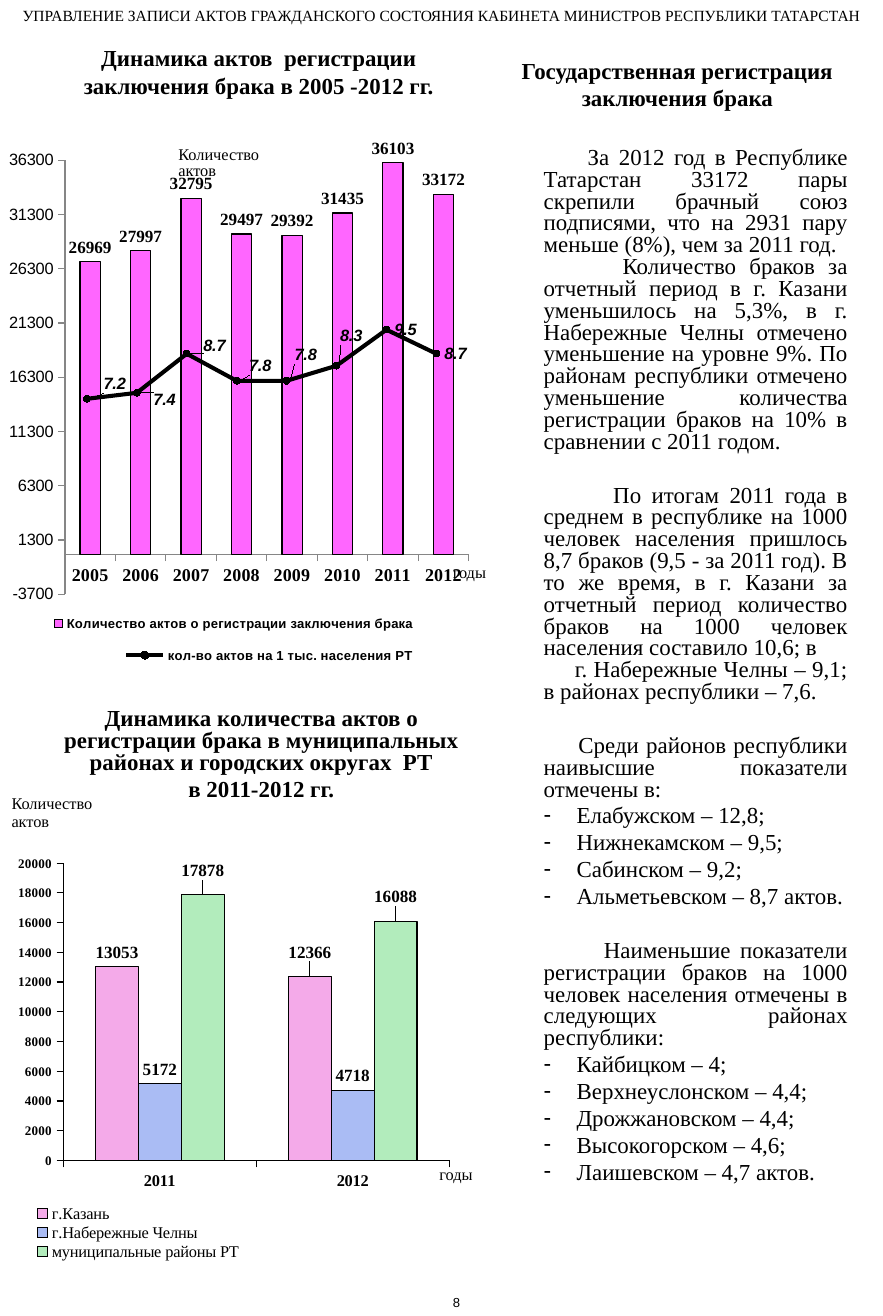
from lxml import etree
from pptx import Presentation
from pptx.chart.data import CategoryChartData
from pptx.dml.color import RGBColor
from pptx.enum.chart import (XL_CHART_TYPE, XL_LABEL_POSITION, XL_LEGEND_POSITION,
                             XL_MARKER_STYLE, XL_TICK_MARK)
from pptx.enum.text import MSO_ANCHOR, MSO_AUTO_SIZE, PP_ALIGN
from pptx.oxml.ns import qn
from pptx.util import Cm, Pt

BLACK = RGBColor(0, 0, 0)
GREY = RGBColor(0x86, 0x86, 0x86)
MAGENTA = RGBColor(0xFF, 0x66, 0xFF)
PINK = RGBColor(0xF4, 0xAA, 0xE9)
BLUE = RGBColor(0xAA, 0xBC, 0xF4)
GREEN = RGBColor(0xB2, 0xEC, 0xBC)
SERIF, SANS = "Times New Roman", "Arial"
LEFT, CENTER, JUSTIFY = PP_ALIGN.LEFT, PP_ALIGN.CENTER, PP_ALIGN.JUSTIFY
TOP, MIDDLE = MSO_ANCHOR.TOP, MSO_ANCHOR.MIDDLE
NO_TICK, OUTSIDE = XL_TICK_MARK.NONE, XL_TICK_MARK.OUTSIDE
COLUMNS, LINE = XL_CHART_TYPE.COLUMN_CLUSTERED, XL_CHART_TYPE.LINE_MARKERS
ABOVE, RIGHT = XL_LABEL_POSITION.OUTSIDE_END, XL_LABEL_POSITION.RIGHT
BOTTOM, CIRCLE = XL_LEGEND_POSITION.BOTTOM, XL_MARKER_STYLE.CIRCLE
TIGHT_LINE = Pt(13.35)

# Text, first-line indent in cm, space before in points
REPORT = [
    ("За 2012 год в Республике Татарстан 33172 пары скрепили брачный союз подписями, "
     "что на 2931 пару меньше (8%), чем за 2011 год.", 0.95, 0),
    ("Количество браков за отчетный период в г. Казани уменьшилось на 5,3%, "
     "в г. Набережные Челны отмечено уменьшение на уровне 9%. По районам республики отмечено "
     "уменьшение количества регистрации браков на 10% в сравнении с 2011 годом.", 1.7, 0),
    ("По итогам 2011 года в среднем в республике на 1000 человек населения пришлось 8,7 браков "
     "(9,5 - за 2011 год). В то же время, в г. Казани за отчетный период количество браков "
     "на 1000 человек населения составило 10,6; в", 1.5, 19.6),
    ("г. Набережные Челны – 9,1; в районах республики – 7,6.", 0.67, 0),
    ("Среди районов республики наивысшие показатели отмечены в:", 0.75, 19.6),
    ["Елабужском – 12,8;", "Нижнекамском – 9,5;", "Сабинском – 9,2;",
     "Альметьевском – 8,7 актов."],
    ("Наименьшие показатели регистрации браков на 1000 человек населения отмечены "
     "в следующих районах республики:", 1.3, 19.6),
    ["Кайбицком – 4;", "Верхнеуслонском – 4,4;", "Дрожжановском – 4,4;",
     "Высокогорском – 4,6;", "Лаишевском – 4,7 актов."],
]


def set_font(font, size, name=SERIF, bold=False, italic=False):
    font.size, font.name, font.bold, font.italic = Pt(size), name, bold, italic
    font.color.rgb = BLACK


def style_paragraph(paragraph, size, name=SERIF, bold=False, align=LEFT, spacing=1.0, before=0):
    paragraph.alignment = align
    paragraph.line_spacing = spacing
    paragraph.space_before = Pt(before)
    for font in (paragraph.font, *(run.font for run in paragraph.runs)):
        set_font(font, size, name, bold)


def write_lines(frame, lines, size, anchor=TOP, last_before=0, **style):
    frame.word_wrap = True
    frame.auto_size = MSO_AUTO_SIZE.NONE
    frame.vertical_anchor = anchor
    for number, line in enumerate(lines):
        paragraph = frame.paragraphs[0] if number == 0 else frame.add_paragraph()
        paragraph.text = line
        style_paragraph(paragraph, size, before=last_before if number else 0, **style)


def add_text(slide, box, lines, size, **style):
    write_lines(slide.shapes.add_textbox(*map(Cm, box)).text_frame, lines, size, **style)


def set_indent(paragraph, margin, first_line, bullet=None):
    properties = paragraph._p.get_or_add_pPr()
    properties.set("marL", str(Cm(margin)))
    properties.set("indent", str(Cm(first_line)))
    if bullet:
        etree.SubElement(properties, qn("a:buChar")).set("char", bullet)
    else:
        etree.SubElement(properties, qn("a:buNone"))


def make_layout(**values):
    """Return a c:layout element with the given manual layout values."""
    layout = etree.Element(qn("c:layout"))
    manual = etree.SubElement(layout, qn("c:manualLayout"))
    for key, value in values.items():
        etree.SubElement(manual, qn("c:" + key)).set("val", str(value))
    return layout


def place_part(element, x, y, w, h, **target):
    """Give a plot area or legend a fixed box in fractions of the chart."""
    for old in element.findall(qn("c:layout")):
        element.remove(old)
    position = 1 if element.find(qn("c:legendPos")) is not None else 0
    element.insert(position, make_layout(**target, xMode="edge", yMode="edge", x=x, y=y, w=w, h=h))


def add_plain_chart(slide, kind, box, categories, series, plot_box, legend_font):
    data = CategoryChartData()
    data.categories = categories
    for name, values in series:
        data.add_series(name, values)
    chart = slide.shapes.add_chart(kind, *map(Cm, box), data).chart
    chart.has_title = False
    chart.has_legend = True
    chart.legend.position = BOTTOM
    chart.legend.include_in_layout = False
    set_font(chart.legend.font, *legend_font)
    plot_area = chart._chartSpace.chart.plotArea
    place_part(plot_area, *plot_box, layoutTarget="inner")
    chart.plots[0].vary_by_categories = False
    chart.value_axis.has_major_gridlines = False
    return chart


def format_axes(chart, limits, category_font, value_font, color):
    values = chart.value_axis
    values.minimum_scale, values.maximum_scale, values.major_unit = limits
    for axis, font in ((chart.category_axis, category_font), (values, value_font)):
        axis.major_tick_mark, axis.minor_tick_mark = OUTSIDE, NO_TICK
        axis.format.line.color.rgb = color
        axis.format.line.width = Pt(0.75)
        set_font(axis.tick_labels.font, *font)


def fill_columns(chart, colors):
    chart.plots[0].gap_width = 150
    for series, color in zip(chart.series, colors):
        series.format.fill.solid()
        series.format.fill.fore_color.rgb = color
        series.format.line.color.rgb = BLACK
        series.format.line.width = Pt(0.75)
        labels = series.data_labels
        labels.show_value = True
        labels.position = ABOVE
        set_font(labels.font, 10.5, SERIF, True)


def shift_label(point, position, font, x, y):
    """Move one data label by fractions of the chart size."""
    label = point.data_label
    label.position = position
    set_font(label.font, *font)
    label._dLbl.insert(1, make_layout(x=x, y=y))


def marriage_dynamics(slide, left, top):
    add_text(slide, (left + 0.91, top, 9.35, 1.5),
             ["Динамика актов  регистрации заключения брака в 2005 -2012 гг."],
             14, anchor=MIDDLE, bold=True, align=CENTER)
    chart = add_plain_chart(
        slide, COLUMNS, (left, top + 2.21, 10.31, 10.92), [str(y) for y in range(2005, 2013)],
        [("Количество актов о регистрации заключения брака",
          (26969, 27997, 32795, 29497, 29392, 31435, 36103, 33172))],
        (0.136, 0.042, 0.845, 0.858), (8, SANS, True))
    place_part(chart.legend._element, 0.1, 0.935, 0.78, 0.045)
    format_axes(chart, (-3700, 36300, 5000), (11, SERIF, True), (10, SANS), GREY)
    fill_columns(chart, [MAGENTA])
    add_text(slide, (left + 3.6, top + 2.27, 2.6, 0.9), ["Количество", "актов"], 10,
             spacing=Pt(9.8))
    add_text(slide, (left + 9.52, top + 11.21, 1.4, 0.69), ["годы"], 10)
    rate_line(slide, (left + 1.12, top + 5.61, 9.4, 8))


def rate_line(slide, box):
    chart = add_plain_chart(
        slide, LINE, box, [str(n) for n in range(1, 9)],
        [("кол-во актов на 1 тыс. населения РТ", (7.2, 7.4, 8.7, 7.8, 7.8, 8.3, 9.5, 8.7))],
        (0.023, 0.049, 0.917, 0.811), (8, SANS, True))
    chart.value_axis.minimum_scale, chart.value_axis.maximum_scale = 0, 10
    chart.value_axis.visible = chart.category_axis.visible = False
    rate = chart.series[0]
    rate.smooth = False
    rate.format.line.color.rgb = BLACK
    rate.format.line.width = Pt(2.5)
    rate.marker.style, rate.marker.size = CIRCLE, 4
    rate.marker.format.fill.solid()
    rate.marker.format.fill.fore_color.rgb = BLACK
    rate.marker.format.line.color.rgb = BLACK
    label_font = (10, SANS, True, True)
    rate.data_labels.show_value = True
    rate.data_labels.position = RIGHT
    set_font(rate.data_labels.font, *label_font)
    shifts = [(0.02, -0.04), (0.02, 0.02), (0.02, -0.02), (0.01, -0.04), (0, -0.07), (-0.01, -0.08)]
    for number, shift in enumerate(shifts):
        shift_label(rate.points[number], RIGHT, label_font, *shift)


def district_dynamics(slide, left, top):
    add_text(slide, (left + 0.74, top, 9.8, 2.29),
             ["Динамика количества актов о регистрации брака в муниципальных "
              "районах и городских округах  РТ", "в 2011-2012 гг."],
             14, bold=True, align=CENTER, spacing=TIGHT_LINE, last_before=3)
    chart = add_plain_chart(
        slide, COLUMNS, (left, top + 2.41, 9.93, 10.82), ["2011", "2012"],
        [("г.Казань", (13053, 12366)), ("г.Набережные Челны", (5172, 4718)),
         ("муниципальные районы РТ", (17878, 16088))],
        (0.138, 0.095, 0.838, 0.593), (10, SERIF))
    place_part(chart.legend._element, 0.065, 0.775, 0.47, 0.115)
    format_axes(chart, (0, 20000, 2000), (10, SERIF, True), (8, SERIF, True), BLACK)
    fill_columns(chart, [PINK, BLUE, GREEN])
    for series, point in ((0, 1), (2, 0), (2, 1)):
        shift_label(chart.series[series].points[point], ABOVE, (10.5, SERIF, True), 0, -0.02)
    add_text(slide, (left, top + 1.84, 2.6, 0.9), ["Количество", "актов"], 10, spacing=Pt(11))
    add_text(slide, (left + 9.23, top + 9.81, 1.6, 0.69), ["годы"], 10)


def registration_report(slide, left, top):
    title, body = slide.placeholders
    title.left, title.top, title.width, title.height = map(Cm, (left, top, 7.39, 1.65))
    write_lines(title.text_frame, ["Государственная регистрация", "заключения брака"], 14,
                anchor=MIDDLE, bold=True, align=CENTER)
    body.left, body.top, body.width, body.height = map(Cm, (left + 0.81, top + 2.21, 6.56, 23.2))
    frame = body.text_frame
    frame.auto_size = MSO_AUTO_SIZE.NONE
    frame.margin_left = frame.margin_right = frame.margin_top = frame.margin_bottom = 0
    items = []
    for entry in REPORT:
        if isinstance(entry, list):
            items += [(district, 0.71, -0.71, 3.1, "-") for district in entry]
        else:
            text, indent, before = entry
            items.append((text, 0, indent, before, None))
    for number, (text, margin, indent, before, bullet) in enumerate(items):
        paragraph = frame.add_paragraph() if number else frame.paragraphs[0]
        paragraph.text = text
        set_indent(paragraph, margin, indent, bullet)
        style_paragraph(paragraph, 14, align=JUSTIFY, spacing=TIGHT_LINE, before=before)


def main():
    presentation = Presentation()
    presentation.slide_width, presentation.slide_height = Cm(19.05), Cm(28.4)
    slide = presentation.slides.add_slide(presentation.slide_layouts[1])
    add_text(slide, (0, 0, 19.05, 0.66),
             ["УПРАВЛЕНИЕ ЗАПИСИ АКТОВ ГРАЖДАНСКОГО СОСТОЯНИЯ КАБИНЕТА МИНИСТРОВ "
              "РЕСПУБЛИКИ ТАТАРСТАН"], 9.5, align=CENTER)
    registration_report(slide, 10.92, 0.99)
    district_dynamics(slide, 0, 15.19)
    marriage_dynamics(slide, 0, 0.79)
    add_text(slide, (9.52, 27.81, 0.79, 0.59), ["8"], 8, name=SANS)
    presentation.save("out.pptx")


if __name__ == "__main__":
    main()
